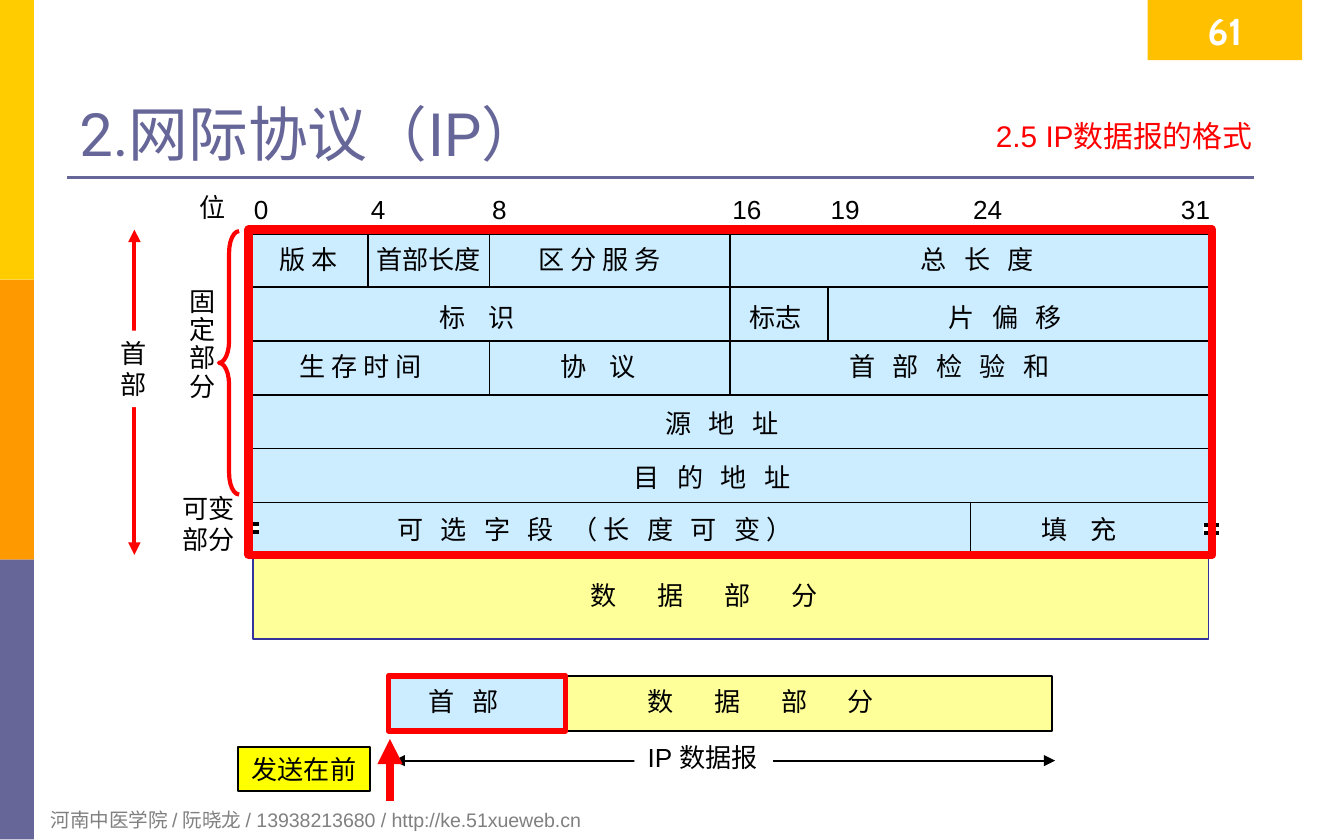
from lxml import etree
from pptx import Presentation
from pptx.dml.color import RGBColor
from pptx.enum.shapes import MSO_CONNECTOR, MSO_SHAPE
from pptx.enum.text import MSO_ANCHOR, MSO_AUTO_SIZE, PP_ALIGN
from pptx.oxml.ns import qn
from pptx.util import Cm, Pt

RECT, BRACE = MSO_SHAPE.RECTANGLE, MSO_SHAPE.LEFT_BRACE
LINE = MSO_CONNECTOR.STRAIGHT
TOP, MID, BASE = MSO_ANCHOR.TOP, MSO_ANCHOR.MIDDLE, MSO_ANCHOR.BOTTOM
LEFT, MIDST, RIGHT = PP_ALIGN.LEFT, PP_ALIGN.CENTER, PP_ALIGN.RIGHT
GROW, FIXED = MSO_AUTO_SIZE.SHAPE_TO_FIT_TEXT, MSO_AUTO_SIZE.NONE

THEME = {
    "black": "000000", "white": "FFFFFF", "red": "FF0000", "gray": "808080",
    "slate": "666699", "gold": "FFCC00", "orange": "FF9900", "amber": "FFC000",
    "sky": "CCECFF", "cream": "FFFF99", "navy": "333399", "yellow": "FFFF00",
    "font": "Arial", "head": "Roboto", "badge": "Cabin",
    "label": 14, "title": 32, "topic": 16, "page": 20, "foot": 10.5,
}

TITLE = "2.网际协议（IP）"
TOPIC = "2.5 IP数据报的格式"
PAGE = "61"
FOOT = "河南中医学院 / 阮晓龙 / 13938213680 / http://ke.51xueweb.cn"

BANDS = ["gold", "orange", "slate"]
BITS = {0: 4.75, 4: 6.96, 8: 9.25, 16: 13.79, 19: 15.65, 24: 18.34, 31: 22.27}
EDGE = (4.75, 22.91)
START, STEP, ROWS = 4.4, 1.02, 6
SPLITS = [(4, 0, 1), (8, 0, 1), (8, 2, 3), (16, 0, 3), (19, 1, 2), (24, 5, 6)]

FIELDS = [
    (4.48, [("版 本", 5.03, 1.65, 1), ("首部长度", 6.86, 2.51, 1),
            ("区 分 服 务", 9.93, 2.95, 1), ("总 长 度", 17.15, 2.9, 3)]),
    (5.56, [("标 识", 8.05, 2.08, 4), ("标志", 13.92, 1.5, 1),
            ("片 偏 移", 17.68, 2.9, 3)]),
    (6.5, [("生 存 时 间", 5.41, 2.95, 1), ("协 议", 10.34, 2.08, 4),
           ("首 部 检 验 和", 15.8, 4.78, 3)]),
    (7.57, [("源 地 址", 12.32, 2.9, 3)]),
    (8.59, [("目 的 地 址", 11.73, 3.84, 3)]),
    (9.58, [("可 选 字 段 （长 度 可 变）", 7.26, 8.43, 3),
            ("填 充", 19.43, 2.08, 4)]),
    (10.82, [("数 据 部 分", 10.92, 6.71, 7)]),
    (12.83, [("数 据 部 分", 11.99, 7.14, 7), ("首 部", 7.85, 1.96, 3)]),
]

deck = Presentation()
deck.slide_width, deck.slide_height = Cm(25.4), Cm(15.88)
slide = deck.slides.add_slide(deck.slide_layouts[1])
shapes = slide.shapes


def tint(name):
    return RGBColor.from_string(THEME[name])


def put(item, **vals):
    for key, val in vals.items():
        setattr(item, key, val)


def place(item, box):
    put(item, **dict(zip(("left", "top", "width", "height"), map(Cm, box))))


def paint(item, fill=None, line=None, width=1):
    if fill:
        item.fill.solid()
        item.fill.fore_color.rgb = tint(fill)
    else:
        item.fill.background()
    if line:
        item.line.color.rgb = tint(line)
        item.line.width = Pt(width)
    else:
        item.line.fill.background()


def shape(box, fill=None, line=None, width=1, kind=RECT):
    item = shapes.add_shape(kind, *map(Cm, box))
    item.shadow.inherit = False
    paint(item, fill, line, width)
    return item


def stroke(x1, y1, x2, y2, color="black", width=1, head=False, tail=False):
    item = shapes.add_connector(LINE, *map(Cm, (x1, y1, x2, y2)))
    item.line.color.rgb = tint(color)
    item.line.width = Pt(width)
    pen = item.line._get_or_add_ln()
    for tag, used in (("a:headEnd", head), ("a:tailEnd", tail)):
        if used:
            etree.SubElement(pen, qn(tag)).set("type", "triangle")
    etree.SubElement(item._element.spPr, qn("a:effectLst"))


def write(item, lines, size="label", color="black", font="font", bold=False,
          align=LEFT, gap=1, space=None, pad=(0.25, 0.13), **frame):
    text = item.text_frame
    put(text, margin_left=Cm(pad[0]), margin_right=Cm(pad[0]),
        margin_top=Cm(pad[1]), margin_bottom=Cm(pad[1]), **frame)
    for num, words in enumerate(lines):
        para = text.add_paragraph() if num else text.paragraphs[0]
        put(para, alignment=align, line_spacing=space)
        run = para.add_run()
        run.text = words
        put(run.font, name=THEME[font], size=Pt(THEME[size]), bold=bold)
        run.font.color.rgb = tint(color)
        if gap > 1:
            run._r.get_or_add_rPr().set("spc", str(155 * (gap - 1)))


def label(lines, box, wrap=False, **style):
    item = shapes.add_textbox(*map(Cm, box))
    write(item, lines, word_wrap=wrap, auto_size=GROW,
          vertical_anchor=TOP, **style)
    return item


TIGHT = (0.23, 0.1)
for num, color in enumerate(BANDS):
    shape((0, num * 5.29, 0.64, 5.29), color)
stroke(1.27, 3.35, 23.7, 3.35, "slate", 1.5)
label([FOOT], (0.71, 15.14, 17.2, 0.71), True, size="foot", color="gray")

title, topic = slide.placeholders
place(title, (1.27, 0.64, 22.86, 2.64))
write(title, [TITLE], "title", "slate", "head", pad=TIGHT,
      word_wrap=True, auto_size=FIXED, vertical_anchor=BASE)
place(topic, (15.9, 2.13, 8, 0.99))
props = topic.text_frame.paragraphs[0]._p.get_or_add_pPr()
props.set("marL", "0")
props.set("indent", "0")
etree.SubElement(props, qn("a:buNone"))
write(topic, [TOPIC], "topic", "red", align=RIGHT, pad=TIGHT,
      word_wrap=True, auto_size=FIXED, vertical_anchor=TOP)
topic.text_frame.paragraphs[0].space_before = Pt(0)
badge = shape((21.69, 0, 2.92, 1.14), "amber")
write(badge, [PAGE], "page", "white", "badge", True, MIDST, pad=TIGHT,
      vertical_anchor=MID)

label("固定部分", (3.33, 5.33, 1.02, 2.41), space=0.9)
label(["可变", "部分"], (3.2, 9.17, 1.5, 1.45))
label(["位"], (3.53, 3.48, 1.02, 0.84))
stroke(7.44, 14.38, 19.94, 14.38, head=True, tail=True)

shape((7.37, 12.78, 3.33, 1.04), "sky", "black")
shape((4.75, 4.4, 18.14, 6.1), "sky", "black", 2)
shape((4.78, 10.52, 18.06, 1.57), "cream", "navy")
shape((10.69, 12.78, 9.19, 1.04), "cream", "black")
for row in range(1, ROWS):
    y = START + row * STEP
    stroke(EDGE[0], y, EDGE[1], y)
for bit, first, last in SPLITS:
    stroke(BITS[bit], START + first * STEP, BITS[bit], START + last * STEP)
for bit, x in BITS.items():
    label([str(bit)], (x - 0.2, 3.53, 0.81 if bit < 10 else 1.09, 0.84))
for top, fields in FIELDS:
    for words, left, width, gap in fields:
        label([words], (left, top, width, 0.84), gap=gap)

for x, y in ((4.6, 9.91), (22.74, 9.93)):
    shape((x, y, 0.3, 0.15), "white")
    for rise in (0, 0.15):
        stroke(x + 0.02, y + rise, x + 0.29, y + rise, width=2)

paint(label(["IP 数据报"], (11.99, 13.89, 2.62, 0.84), True), "white")
stroke(2.54, 4.34, 2.54, 10.49, "red", 2.25, True, True)
paint(label("首部", (2.03, 6.25, 1.02, 1.45)), "white")
shape((4.7, 4.34, 18.21, 6.15), line="red", width=4.5)
shape((7.34, 12.78, 3.35, 1.04), line="red", width=3)
brace = shape((4.14, 4.37, 0.38, 4.98), line="red", width=2.25, kind=BRACE)
brace.adjustments[0] = 1.08
stroke(7.37, 15.14, 7.37, 13.97, "red", 4.5, tail=True)
paint(label(["发送在前"], (4.5, 14.12, 2.49, 0.84), align=MIDST),
      "yellow", "black")

deck.save("out.pptx")
